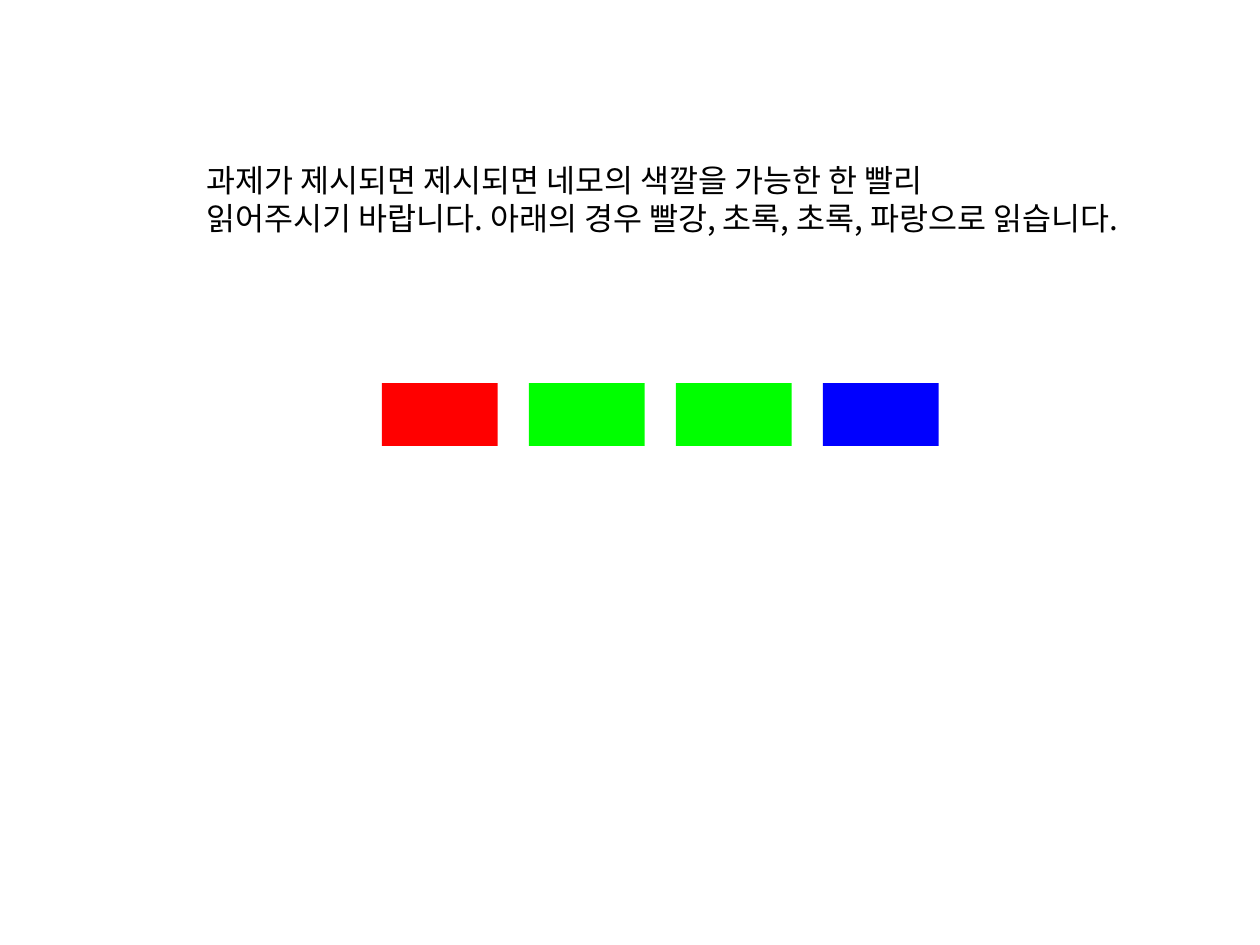
from lxml.etree import SubElement
from pptx import Presentation
from pptx.dml.color import RGBColor
from pptx.enum.shapes import MSO_SHAPE
from pptx.enum.text import MSO_AUTO_SIZE
from pptx.oxml.ns import qn
from pptx.util import Inches, Pt

BLACK = RGBColor(0, 0, 0)
RED = RGBColor(255, 0, 0)
GREEN = RGBColor(0, 255, 0)
BLUE = RGBColor(0, 0, 255)
FONT = "Noto Sans CJK KR"

INSTRUCTIONS = [
    "과제가 제시되면 제시되면 네모의 색깔을 가능한 한 빨리",
    "읽어주시기 바랍니다. 아래의 경우 빨강, 초록, 초록, 파랑으로 읽습니다.",
]
SQUARE_COLORS = [RED, GREEN, GREEN, BLUE]
FIRST_LEFT, LAST_LEFT = 3.03, 6.53


def add_text(page, lines, left, top, width, height, *, size=18, color=BLACK, font=FONT):
    box = page.shapes.add_textbox(Inches(left), Inches(top), Inches(width), Inches(height))
    frame = box.text_frame
    frame.word_wrap = False
    frame.auto_size = MSO_AUTO_SIZE.SHAPE_TO_FIT_TEXT
    frame.text = "\n".join(lines)
    for paragraph in frame.paragraphs:
        for span in paragraph.runs:
            span.font.size = Pt(size)
            span.font.name = font
            span.font.color.rgb = color
            # Korean letters take the East Asian typeface
            SubElement(span.font._element, qn("a:ea"), typeface=font)


def add_color_square(page, left, color):
    square = page.shapes.add_shape(
        MSO_SHAPE.RECTANGLE, Inches(left), Inches(3.04), Inches(0.92), Inches(0.5))
    square.shadow.inherit = False
    square.fill.solid()
    square.fill.fore_color.rgb = color
    square.line.fill.background()


def main():
    deck = Presentation()
    deck.slide_width, deck.slide_height = Inches(10), Inches(7.5)
    page = deck.slides.add_slide(deck.slide_layouts[6])

    add_text(page, INSTRUCTIONS, 1.54, 1.23, 8.27, 0.71)
    pitch = (LAST_LEFT - FIRST_LEFT) / (len(SQUARE_COLORS) - 1)
    for index, color in enumerate(SQUARE_COLORS):
        add_color_square(page, FIRST_LEFT + index * pitch, color)

    deck.save("out.pptx")


if __name__ == "__main__":
    main()
